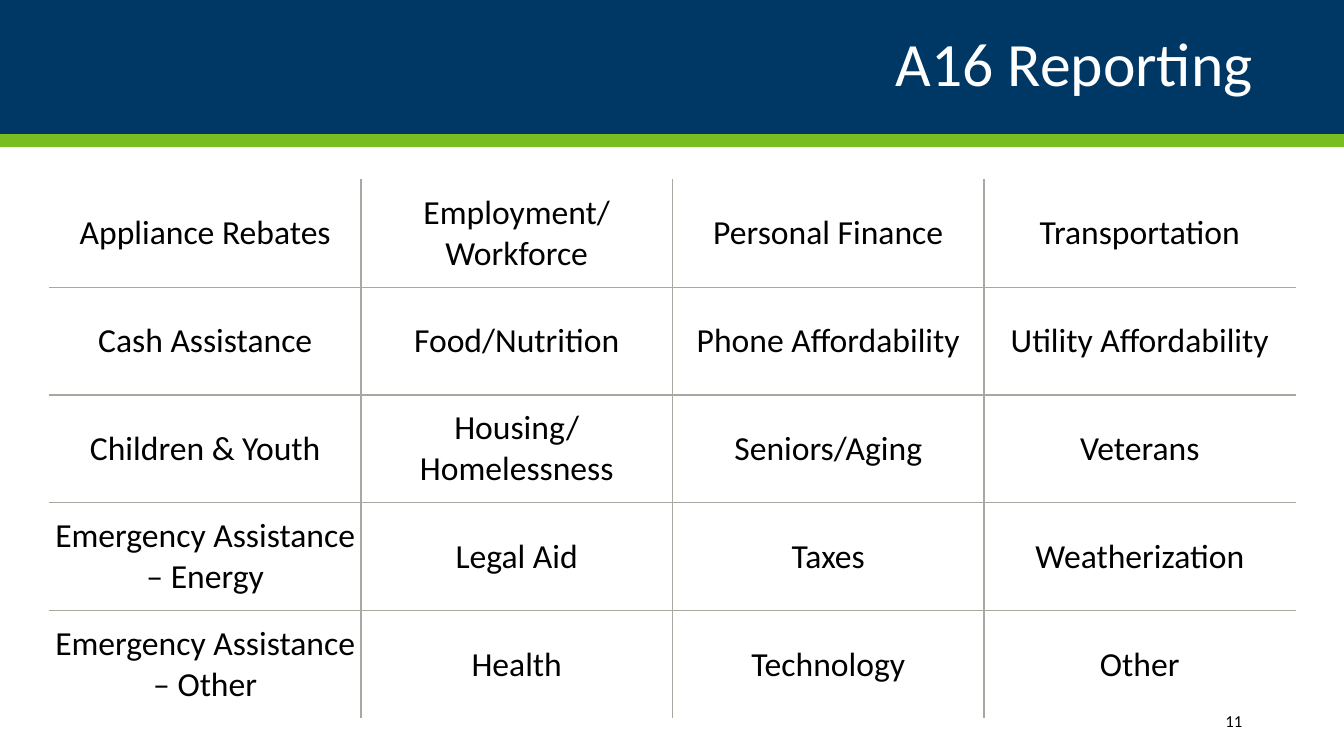
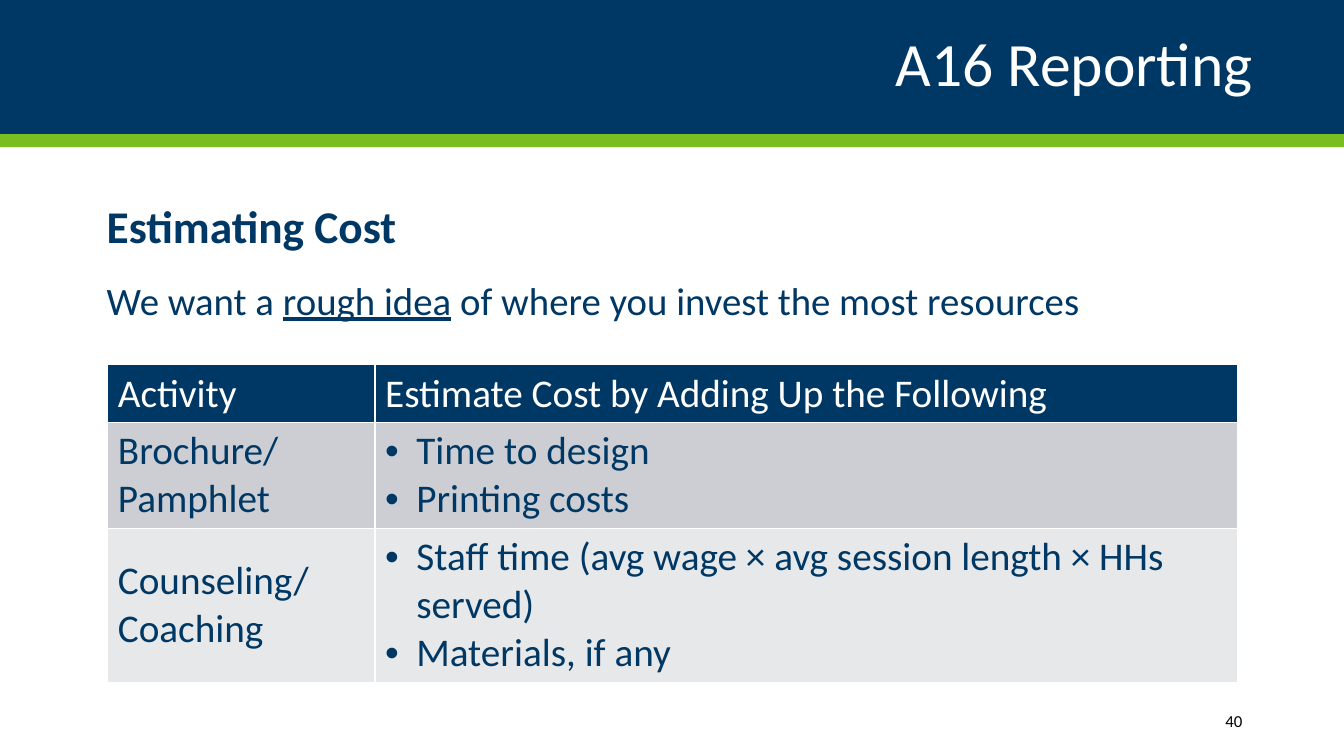
from lxml import etree
from pptx import Presentation
from pptx import util as u
from pptx.dml.color import RGBColor
from pptx.enum import shapes, text
from pptx.oxml import ns

NAVY, GREEN, WHITE, BLACK, GREY = "003865", "78BE21", "FFFFFF", "000000", "A8A8A1"
LEFT, CENTER, RIGHT = text.PP_ALIGN.LEFT, text.PP_ALIGN.CENTER, text.PP_ALIGN.RIGHT
MIDDLE = text.MSO_ANCHOR.MIDDLE
color = RGBColor.from_string


def write(frame, lines, size, ink, align=LEFT, bullet=False, **spacing):
    for index, line in enumerate(lines):
        paragraph = frame.paragraphs[0] if index == 0 else frame.add_paragraph()
        for name, value in {"alignment": align, **spacing}.items():
            setattr(paragraph, name, value)
        if bullet:
            props = paragraph._p.get_or_add_pPr()
            props.set("marL", str(u.Inches(0.31)))
            props.set("indent", str(-u.Inches(0.31)))
            etree.SubElement(props, ns.qn("a:buFont")).set("typeface", "Arial")
            etree.SubElement(props, ns.qn("a:buChar")).set("char", "•")
        for words, changes in [(line, {})] if isinstance(line, str) else line:
            run = paragraph.add_run()
            run.text = words
            look = {"name": "Calibri", "size": u.Pt(size), "bold": False, **changes}
            for name, value in look.items():
                setattr(run.font, name, value)
            run.font.color.rgb = color(ink)


def add_grid(slide, rows, left, top, widths, heights, fills, inks, rule, size,
             align=LEFT, side_margin=0.1, bullet_column=None):
    frame = slide.shapes.add_table(
        len(rows), len(widths), u.Inches(left), u.Inches(top),
        u.Inches(sum(widths)), u.Inches(sum(heights)))
    grid = frame.table
    grid.first_row = grid.horz_banding = False
    for column, width in zip(grid.columns, widths):
        column.width = u.Inches(width)
    for r, (row, height) in enumerate(zip(rows, heights)):
        grid.rows[r].height = u.Inches(height)
        for c, words in enumerate(row):
            cell = grid.cell(r, c)
            layout = {"vertical_anchor": MIDDLE,
                      "margin_left": u.Inches(side_margin),
                      "margin_right": u.Inches(side_margin),
                      "margin_top": u.Inches(0.05), "margin_bottom": u.Inches(0.05)}
            for name, value in layout.items():
                setattr(cell, name, value)
            cell.fill.solid()
            cell.fill.fore_color.rgb = color(fills[r])
            write(cell.text_frame, words.split("\n"), size, inks[r], align,
                  bullet=r > 0 and c == bullet_column)
            inner = {"L": c > 0, "R": c < len(widths) - 1,
                     "T": r > 0, "B": r < len(rows) - 1}
            props = cell._tc.get_or_add_tcPr()
            for place, (side, is_inner) in enumerate(inner.items()):
                line = etree.Element(ns.qn(f"a:ln{side}"), w=str(u.Pt(1)))
                solid = etree.SubElement(line, ns.qn("a:solidFill"))
                etree.SubElement(solid, ns.qn("a:srgbClr")).set(
                    "val", rule if is_inner else WHITE)
                props.insert(place, line)


deck = Presentation()
deck.slide_width, deck.slide_height = u.Inches(13.33), u.Inches(7.5)
categories_slide, cost_slide = [
    deck.slides.add_slide(deck.slide_layouts[6]) for _ in range(2)]

for slide in deck.slides:
    for top, height, fill in ((1.33, 0.13, GREEN), (0, 1.33, NAVY)):
        band = slide.shapes.add_shape(
            shapes.MSO_SHAPE.RECTANGLE, 0, u.Inches(top), deck.slide_width, u.Inches(height))
        band.shadow.inherit = False
        band.fill.solid()
        band.fill.fore_color.rgb = color(fill)
        band.line.fill.background()
    title = band.text_frame
    title.margin_left = title.margin_right = u.Inches(0.9)
    title.vertical_anchor = MIDDLE
    write(title, ["A16 Reporting"], 44, WHITE, RIGHT, line_spacing=0.9)

categories = [
    ["Appliance Rebates", "Employment/\nWorkforce", "Personal Finance", "Transportation"],
    ["Cash Assistance", "Food/Nutrition", "Phone Affordability", "Utility Affordability"],
    ["Children & Youth", "Housing/\nHomelessness", "Seniors/Aging", "Veterans"],
    ["Emergency Assistance – Energy", "Legal Aid", "Taxes", "Weatherization"],
    ["Emergency Assistance – Other", "Health", "Technology", "Other"],
]
add_grid(categories_slide, categories, 0.49, 1.78, [3.09] * 4, [1.07] * 5,
         [WHITE] * 5, [BLACK] * 5, GREY, 24, CENTER, side_margin=0.05)

intro = cost_slide.shapes.add_textbox(
    u.Inches(0.96), u.Inches(1.98), u.Inches(11.68), u.Inches(1.33)).text_frame
intro.word_wrap = True
write(intro, [
    [("Estimating Cost", {"bold": True, "size": u.Pt(32.4)})],
    [("We want a ", {}), ("rough idea", {"underline": True}),
     (" of where you invest the most resources", {})],
], 27.7, NAVY, line_spacing=0.9, space_before=u.Pt(10), space_after=u.Pt(10))

costs = [
    ["Activity", "Estimate Cost by Adding Up the Following"],
    ["Brochure/\nPamphlet", "Time to design\nPrinting costs"],
    ["Counseling/\nCoaching",
     "Staff time (avg wage × avg session length × HHs served)\nMaterials, if any"],
]
add_grid(cost_slide, costs, 1.07, 3.62, [2.65, 8.55], [0.57, 1.05, 1.53],
         [NAVY, "CCCED3", "E7E8EA"], [WHITE, NAVY, NAVY], WHITE, 28, bullet_column=1)

for slide, page in zip(deck.slides, ("11", "40")):
    number = slide.shapes.add_textbox(
        u.Inches(10.82), u.Inches(6.95), u.Inches(1.6), u.Inches(0.4)).text_frame
    number.word_wrap = True
    number.vertical_anchor = MIDDLE
    write(number, [page], 12, BLACK, RIGHT)

deck.save("out.pptx")
